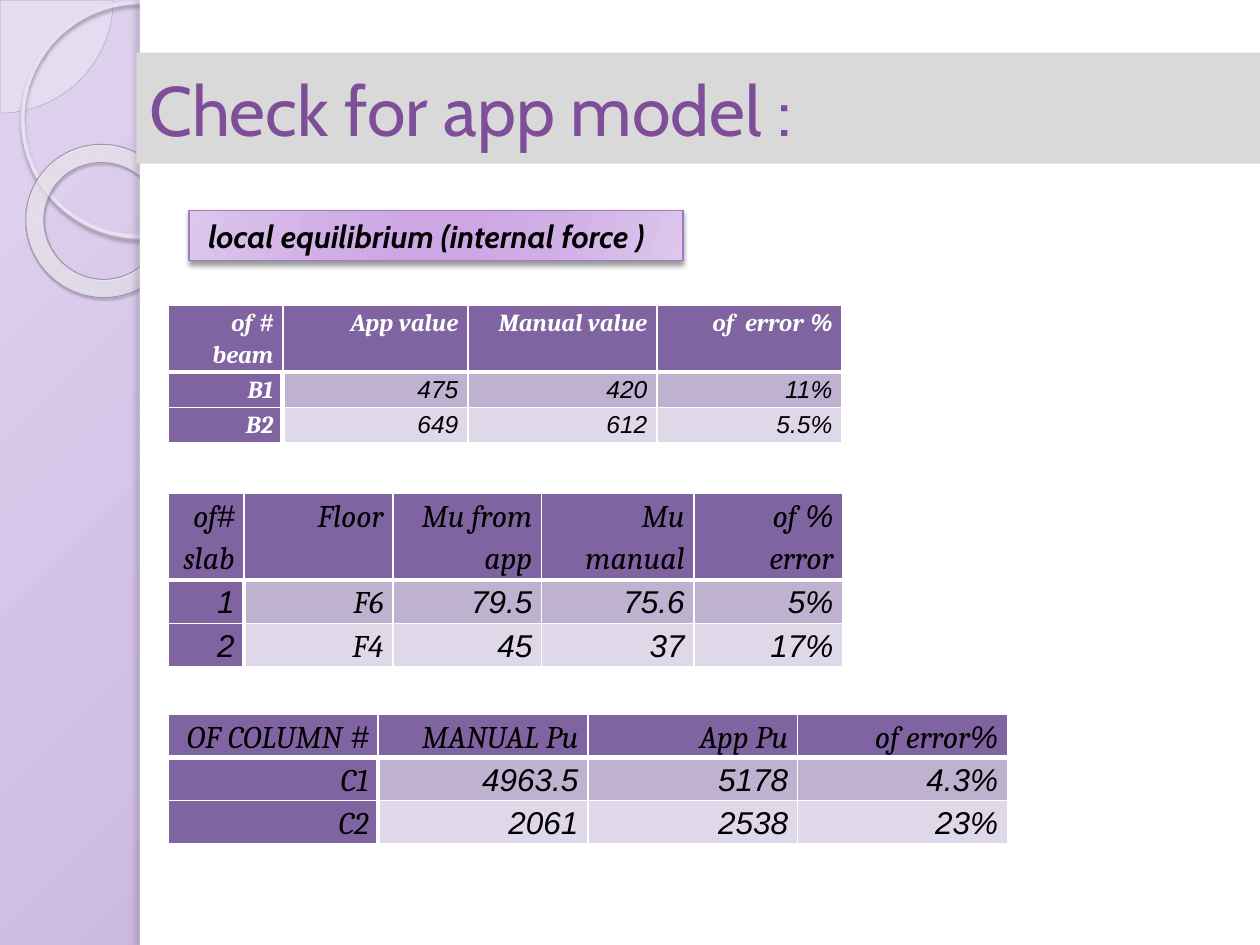
"""Build the slide that checks a structural model against hand values."""
from dataclasses import dataclass
from typing import Any, NamedTuple

from pptx import Presentation
from pptx import util as u
from pptx.dml.color import RGBColor
from pptx.enum import shapes, text
from pptx.oxml import parse_xml
from pptx.oxml.ns import nsdecls, qn

Cm = u.Cm
Kind = shapes.MSO_SHAPE


class Stop(NamedTuple):
    pos: int
    tone: str
    alpha: int = 100


class Shade(NamedTuple):
    tone: str
    alpha: int
    blur: float
    dist: float
    angle: int


@dataclass(frozen=True)
class Theme:
    white: str = "FFFFFF"
    black: str = "000000"
    bar: str = "D9D9D9"
    title: str = "7E4E99"
    head: str = "8064A2"
    bands: tuple = ("BFB1D0", "DFD8E8")
    pie: str = "F6F4F9"
    rim: str = "ACA0B9"
    ring: str = "E8E0F2"
    edge: str = "A094AF"
    frame: str = "A379BB"
    back: tuple = (Stop(0, "E0D3EF"), Stop(40, "D1BFE6"), Stop(100, "9A8AAD"))
    donut: tuple = (Stop(0, "F9F7FB", 70), Stop(70, "FCFBFE", 55), Stop(100, "B099CA", 60))
    badge: tuple = (Stop(0, "DDC7ED"), Stop(30, "D0AFE7"), Stop(45, "CCA6E5"),
                    Stop(55, "CCA6E5"), Stop(73, "D0AFE7"), Stop(100, "DDC7ED"))
    sans: str = "Cabin"
    serif: str = "Cambria"
    digit: str = "Arial"
    big: int = 40
    mid: int = 18
    small: int = 14


T = Theme()


@dataclass(frozen=True)
class Shape:
    kind: Any
    at: tuple
    fill: str | None = None
    alpha: int = 100
    line: tuple | None = None
    shade: Shade | None = None
    adj: tuple = ()
    turn: float = 0


@dataclass(frozen=True)
class Grid:
    at: tuple
    cols: tuple
    rows: tuple
    cells: tuple
    size: int = T.mid
    tone: str = T.black
    bold: bool = False


ART = (
    Shape(Kind.PIE, (-2.27, -2.27, 4.55, 4.55), T.pie, 33, (T.rim, 0.25), adj=(0, 54.02)),
    Shape(Kind.OVAL, (0.46, 0.05, 4.72, 4.72), line=(T.ring, 2.15),
          shade=Shade("958D9D", 85, 2, 2, 90)),
    Shape(Kind.DONUT, (0.51, 2.92, 3.12, 3.07), line=(T.edge, 0.58),
          shade=Shade("4A4550", 35, 1, 1.2, 75), adj=(0.12,), turn=38.6),
    Shape(Kind.RECTANGLE, (2.82, 0, 22.58, 19.05), T.white),
    Shape(Kind.RECTANGLE, (2.82, 0, 0.2, 19.05), T.white,
          shade=Shade("646068", 25, 3, 3, 180)),
    Shape(Kind.RECTANGLE, (3.81, 4.24, 9.96, 1.02), line=(T.frame, 0.75),
          shade=Shade(T.black, 40, 3, 2, 90)),
)

GRIDS = (
    Grid((3.39, 6.15), (2.31, 3.73, 3.81, 3.73), (1.35, 0.71, 0.71),
         (("# of beam", "App value", "Manual value", "% of  error"),
          ("B1", "475", "420", "11%"),
          ("B2", "649", "612", "5.5%")), T.small, T.white, True),
    Grid((3.39, 9.95), (1.53, 3, 3, 3.07, 3), (1.74, 0.88, 0.88),
         (("#of slab", "Floor", "Mu from app ", "Mu manual ", "% of error"),
          ("1", "F6", "79.5", "75.6", "5%"),
          ("2", "F4", "45", "37", "17%"))),
    Grid((3.39, 14.4), (4.23,) * 4, (0.87,) * 3,
         (("# OF COLUMN ", "MANUAL Pu", "App Pu", "%of error "),
          ("C1", "4963.5", "5178", "4.3%"),
          ("C2", "2061", "2538", "23%"))),
)


def tint(tone: str, alpha: int = 100) -> str:
    """Return colour XML with its opacity."""
    return f'<a:srgbClr val="{tone}"><a:alpha val="{alpha * 1000}"/></a:srgbClr>'


def blend(host: Any, stops: tuple, angle: int = 0, to: tuple = ()) -> None:
    """Swap the empty fill of a host for a linear or round gradient."""
    marks = "".join(f'<a:gs pos="{s.pos * 1000}">{tint(s.tone, s.alpha)}</a:gs>' for s in stops)
    way = f'<a:lin ang="{angle * 60000}" scaled="0"/>'
    if to:
        l, t, r, b = (n * 1000 for n in to)
        way = (f'<a:path path="circle"><a:fillToRect l="{l}" t="{t}" r="{r}" b="{b}"/>'
               '</a:path>')
    grad = parse_xml(f'<a:gradFill {nsdecls("a")} rotWithShape="1"><a:gsLst>{marks}</a:gsLst>'
                     f'{way}</a:gradFill>')
    host.replace(host.find(qn("a:noFill")), grad)


def cast(shape: Any, shade: Shade) -> None:
    """Give a shape an outer shadow."""
    blur, dist = u.Pt(shade.blur), u.Pt(shade.dist)
    shape._element.spPr.find(qn("a:effectLst")).append(parse_xml(
        f'<a:outerShdw {nsdecls("a")} blurRad="{blur}" dist="{dist}" '
        f'dir="{shade.angle * 60000}" algn="ctr" rotWithShape="0">'
        f'{tint(shade.tone, shade.alpha)}</a:outerShdw>'))


def draw(slide: Any, item: Shape) -> Any:
    """Draw one preset shape."""
    shape = slide.shapes.add_shape(item.kind, *map(Cm, item.at))
    shape.shadow.inherit = False
    shape.rotation = item.turn
    for i, value in enumerate(item.adj):
        shape.adjustments[i] = value
    if item.fill:
        shape.fill.solid()
        shape.fill.fore_color.rgb = RGBColor.from_string(item.fill)
        color = shape._element.spPr.find(qn("a:solidFill"))
        color.replace(color[0], parse_xml(tint(item.fill, item.alpha).replace(
            "<a:srgbClr", f'<a:srgbClr {nsdecls("a")}', 1)))
    else:
        shape.fill.background()
    if item.line:
        shape.line.color.rgb = RGBColor.from_string(item.line[0])
        shape.line.width = u.Pt(item.line[1])
    else:
        shape.line.fill.background()
    if item.shade:
        cast(shape, item.shade)
    return shape


def write(frame: Any, words: str, *, size: int, tone: str, face: str, bold: bool = False,
          slant: bool = False, rtl: bool = False) -> None:
    """Put formatted text into a frame."""
    para = frame.paragraphs[0]
    para.alignment = text.PP_ALIGN.RIGHT if rtl else text.PP_ALIGN.LEFT
    run = para.add_run()
    run.text = words
    font = run.font
    font.size, font.name, font.bold, font.italic = u.Pt(size), face, bold, slant
    font.color.rgb = RGBColor.from_string(tone)
    if rtl:
        para.line_spacing = 1.15
        para._p.get_or_add_pPr().set("rtl", "1")
        run._r.get_or_add_rPr().append(
            parse_xml(f'<a:cs {nsdecls("a")} typeface="{T.digit}"/>'))


def rule(cell: Any, row: int, col: int) -> None:
    """Set white cell borders, thick under the head and beside the first column."""
    thick = {"L": row > 0 and col == 1, "R": row > 0 and col == 0, "T": row == 1, "B": row == 0}
    for i, (side, wide) in enumerate(thick.items()):
        cell._tc.get_or_add_tcPr().insert(i, parse_xml(
            f'<a:ln{side} {nsdecls("a")} w="{u.Pt(3 if wide else 1)}"><a:solidFill>'
            f'{tint(T.white)}</a:solidFill></a:ln{side}>'))


def table(slide: Any, grid: Grid) -> None:
    """Draw one table of checked values."""
    tab = slide.shapes.add_table(len(grid.rows), len(grid.cols), *map(Cm, grid.at),
                                 Cm(sum(grid.cols)), Cm(sum(grid.rows))).table
    for col, wide in zip(tab.columns, grid.cols):
        col.width = Cm(wide)
    for r, (tall, words) in enumerate(zip(grid.rows, grid.cells)):
        tab.rows[r].height = Cm(tall)
        for c, word in enumerate(words):
            cell, lead = tab.cell(r, c), r == 0 or c == 0
            cell.margin_left = cell.margin_right = Cm(0.19)
            cell.margin_top = cell.margin_bottom = 0
            rule(cell, r, c)
            cell.fill.solid()
            cell.fill.fore_color.rgb = RGBColor.from_string(T.head if lead else T.bands[r - 1])
            write(cell.text_frame, word, size=grid.size, tone=grid.tone if lead else T.black,
                  face=T.serif, bold=grid.bold and lead, slant=True, rtl=True)


def head(slide: Any, words: str) -> None:
    """Place the title bar above the art."""
    bar = slide.shapes.title
    bar.left, bar.top, bar.width, bar.height = map(Cm, (2.75, 1.06, 22.65, 2.24))
    bar.fill.solid()
    bar.fill.fore_color.rgb = RGBColor.from_string(T.bar)
    bar.text_frame.auto_size = text.MSO_AUTO_SIZE.NONE
    bar.text_frame.vertical_anchor = text.MSO_ANCHOR.MIDDLE
    write(bar.text_frame, words, size=T.big, tone=T.title, face=T.sans)
    slide.shapes._spTree.append(bar._element)


def main() -> None:
    """Build and save the slide."""
    deck = Presentation()
    deck.slide_width, deck.slide_height = Cm(25.4), Cm(19.05)
    slide = deck.slides.add_slide(deck.slide_layouts[5])
    slide.background.fill.background()
    blend(slide._element.find(".//" + qn("p:bgPr")), T.back, to=(-24, -20, 124, 120))
    *_, donut, _, _, badge = [draw(slide, item) for item in ART]
    blend(donut._element.spPr, T.donut, to=(-408, -50, 508, 150))
    blend(badge._element.spPr, T.badge, angle=16)
    badge.text_frame.word_wrap = True
    badge.text_frame.margin_left = Cm(0.39)
    write(badge.text_frame, "local equilibrium (internal force )", size=T.mid, tone=T.black,
          face=T.sans, bold=True, slant=True)
    head(slide, "Check for app model :")
    slide.shapes._spTree.append(badge._element)
    for grid in GRIDS:
        table(slide, grid)
    deck.save("out.pptx")


if __name__ == "__main__":
    main()
